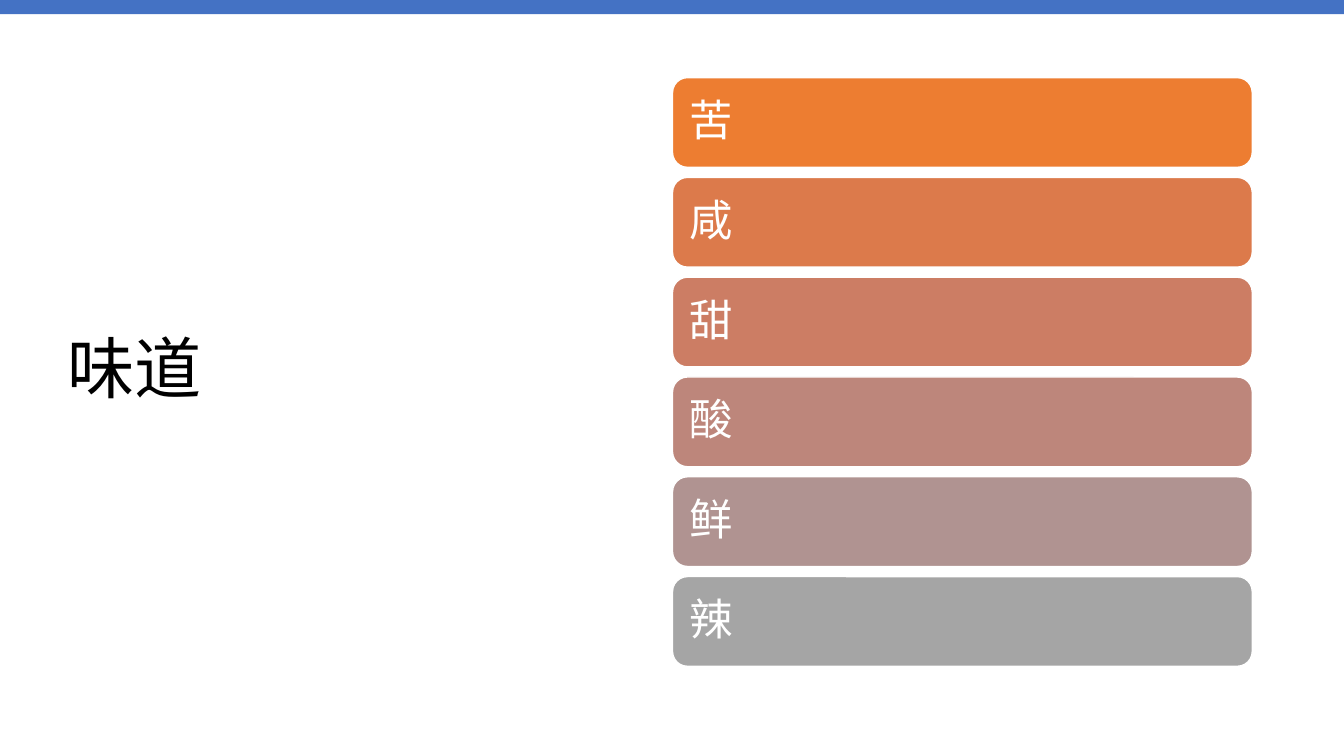
from pptx import Presentation
from pptx.dml.color import RGBColor
from pptx.enum.shapes import MSO_SHAPE
from pptx.enum.text import MSO_ANCHOR, PP_ALIGN
from pptx.util import Inches, Pt

# Content
TITLE = "味道"
TASTES = [
    ("苦", "bitter"),
    ("咸", "salty"),
    ("甜", "sweet"),
    ("酸", "sour"),
    ("鲜", "umami"),
    ("辣", "spicy"),
]
COLOURS = {
    "title": "000000",
    "white": "FFFFFF",
    "band": "4472C4",
    "bitter": "ED7D31",
    "salty": "DC7A4B",
    "sweet": "CC7D64",
    "sour": "BD867B",
    "umami": "B09391",
    "spicy": "A5A5A5",
}
FONT = "Calibri"

# Layout in inches
PAGE_WIDTH, PAGE_HEIGHT = 13.33, 7.5
BAND_HEIGHT = 0.14
BAR_LEFT, BAR_TOP, BAR_WIDTH, BAR_HEIGHT = 6.67, 0.77, 5.75, 0.89
BAR_STEP = 0.99
BAR_INSET = 0.13


def colour(name):
    return RGBColor.from_string(COLOURS[name])


def add_block(page, kind, left, top, width, height, fill):
    block = page.shapes.add_shape(
        kind, Inches(left), Inches(top), Inches(width), Inches(height))
    block.shadow.inherit = False
    block.fill.solid()
    block.fill.fore_color.rgb = colour(fill)
    block.line.fill.background()
    return block


def write(box, text, size, ink):
    frame = box.text_frame
    frame.word_wrap = True
    frame.vertical_anchor = MSO_ANCHOR.MIDDLE
    para = frame.paragraphs[0]
    para.text = text
    para.alignment = PP_ALIGN.LEFT
    para.line_spacing = 0.9
    para.font.name = FONT
    para.font.size = Pt(size)
    para.font.color.rgb = colour(ink)
    return para


deck = Presentation()
deck.slide_width = Inches(PAGE_WIDTH)
deck.slide_height = Inches(PAGE_HEIGHT)
page = deck.slides.add_slide(deck.slide_layouts[6])

# Title
title = page.shapes.add_textbox(
    Inches(0.57), Inches(0.68), Inches(5.67), Inches(6.02))
write(title, TITLE, 48, "title")

# Band along the top edge
add_block(page, MSO_SHAPE.RECTANGLE, 0, 0, PAGE_WIDTH, BAND_HEIGHT, "band")

# One bar for each taste
for index, (taste, fill) in enumerate(TASTES):
    bar = add_block(page, MSO_SHAPE.ROUNDED_RECTANGLE, BAR_LEFT,
                    BAR_TOP + index * BAR_STEP, BAR_WIDTH, BAR_HEIGHT, fill)
    bar.line.color.rgb = colour("white")
    bar.line.width = Pt(1)
    frame = bar.text_frame
    frame.margin_left = frame.margin_right = Inches(BAR_INSET)
    frame.margin_top = frame.margin_bottom = Inches(BAR_INSET)
    para = write(bar, taste, 31, "white")
    para.space_after = Pt(11)

deck.save("out.pptx")
